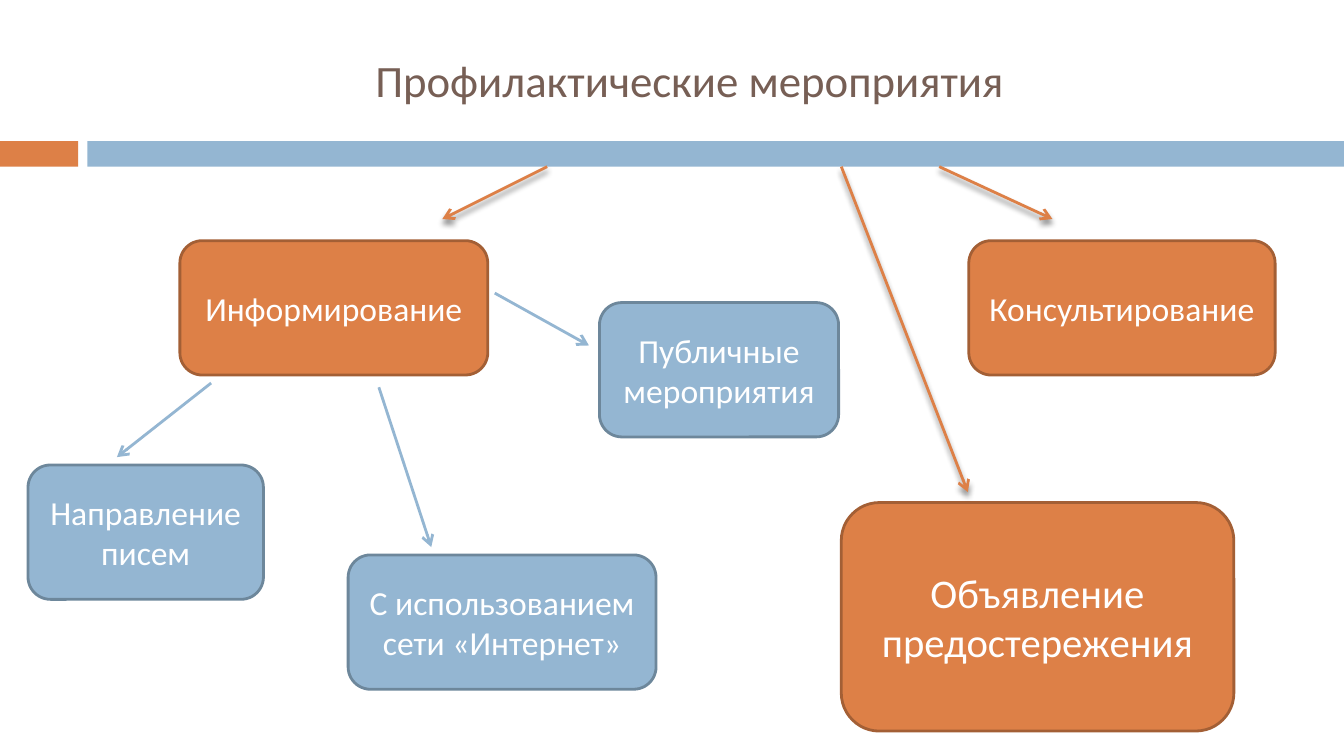
import pptx
import pptx.dml.color
import pptx.enum.shapes
import pptx.enum.text
import pptx.oxml
import pptx.oxml.ns
import pptx.util
from pptx.util import Cm

ORANGE, ORANGE_EDGE = "DD8047", "A35F35"
BLUE, BLUE_EDGE = "94B6D2", "6D879B"
WHITE, BROWN = "FFFFFF", "775F55"
BAR_TOP, BAR_HEIGHT = 2.67, 0.48
BAR_BOTTOM = BAR_TOP + BAR_HEIGHT
BOX_HEIGHT = 2.54

NAMESPACE = pptx.oxml.ns.nsdecls("a")
ARROWHEAD = f'<a:tailEnd {NAMESPACE} type="arrow"/>'
NO_EFFECT = f"<a:effectLst {NAMESPACE}/>"
SOFT_SHADOW = (
    f'<a:effectLst {NAMESPACE}>'
    '<a:outerShdw blurRad="38100" dist="30480" dir="5400000" rotWithShape="0">'
    '<a:srgbClr val="000000"><a:alpha val="45000"/></a:srgbClr>'
    "</a:outerShdw></a:effectLst>"
)


def color(hex_string):
    return pptx.dml.color.RGBColor.from_string(hex_string)


class SlideBuilder:
    font = "Calibri"
    line_width = pptx.util.Pt(1.5)

    def __init__(self, slide):
        self.slide = slide

    def add_text(self, shape, text, size, text_color, space_before=0):
        """Put one centred paragraph in the middle of the shape."""
        frame = shape.text_frame
        frame.word_wrap = True
        frame.vertical_anchor = pptx.enum.text.MSO_ANCHOR.MIDDLE
        paragraph = frame.paragraphs[0]
        paragraph.alignment = pptx.enum.text.PP_ALIGN.CENTER
        paragraph.space_before = pptx.util.Pt(space_before)
        run = paragraph.add_run()
        run.text = text
        run.font.name = self.font
        run.font.size = pptx.util.Pt(size)
        run.font.color.rgb = color(text_color)

    def title(self, text, left, top, width, height):
        shape = self.slide.shapes.add_textbox(Cm(left), Cm(top), Cm(width), Cm(height))
        self.add_text(shape, text, 24, BROWN)

    def filled_shape(self, kind, fill, left, top, width, height):
        shape = self.slide.shapes.add_shape(
            kind, Cm(left), Cm(top), Cm(width), Cm(height)
        )
        shape.shadow.inherit = False
        shape.fill.solid()
        shape.fill.fore_color.rgb = color(fill)
        return shape

    def bar(self, fill, left, width):
        kind = pptx.enum.shapes.MSO_SHAPE.RECTANGLE
        shape = self.filled_shape(kind, fill, left, BAR_TOP, width, BAR_HEIGHT)
        shape.line.fill.background()

    def box(self, text, fill, edge, left, top, width,
            height=BOX_HEIGHT, size=18, space_before=0):
        kind = pptx.enum.shapes.MSO_SHAPE.ROUNDED_RECTANGLE
        shape = self.filled_shape(kind, fill, left, top, width, height)
        shape.line.color.rgb = color(edge)
        shape.line.width = self.line_width
        self.add_text(shape, text, size, WHITE, space_before)

    def arrow(self, line_color, start, end, effect=NO_EFFECT):
        connector = self.slide.shapes.add_connector(
            pptx.enum.shapes.MSO_CONNECTOR.STRAIGHT,
            *(Cm(length) for length in (*start, *end)),
        )
        connector.line.color.rgb = color(line_color)
        connector.line.width = self.line_width
        properties = connector.element.spPr
        outline = properties.find(pptx.oxml.ns.qn("a:ln"))
        outline.append(pptx.oxml.parse_xml(ARROWHEAD))
        properties.append(pptx.oxml.parse_xml(effect))


def main():
    presentation = pptx.Presentation()
    presentation.slide_width = Cm(25.4)
    presentation.slide_height = Cm(14.29)
    builder = SlideBuilder(presentation.slides.add_slide(presentation.slide_layouts[6]))

    builder.bar(ORANGE, 0, 1.48)
    builder.bar(BLUE, 1.65, 23.75)
    builder.title("Профилактические мероприятия", 1.7, 0.48, 22.66, 2.06)

    for text, left, top, width in (
        ("Информирование", 3.4, 4.55, 5.82),
        ("Консультирование", 18.31, 4.55, 5.79),
    ):
        builder.box(text, ORANGE, ORANGE_EDGE, left, top, width)
    builder.box("Объявление предостережения", ORANGE, ORANGE_EDGE,
                15.9, 9.5, 7.42, height=4.32, size=21.8, space_before=5.2)

    for text, left, top, width in (
        ("Публичные мероприятия", 11.33, 5.72, 4.52),
        ("С использованием сети «Интернет»", 6.58, 10.49, 5.82),
        ("Направление писем", 0.53, 8.79, 4.45),
    ):
        builder.box(text, BLUE, BLUE_EDGE, left, top, width)

    for start, end in (
        ((3.99, 7.24), (2.21, 8.64)),
        ((7.16, 7.32), (8.15, 10.34)),
        ((9.35, 5.54), (11.13, 6.53)),
    ):
        builder.arrow(BLUE, start, end)

    for start_x, end in (
        (10.34, (8.36, 4.14)),
        (15.9, (18.29, 9.3)),
        (17.75, (19.89, 4.14)),
    ):
        builder.arrow(ORANGE, (start_x, BAR_BOTTOM), end, SOFT_SHADOW)

    presentation.save("out.pptx")


if __name__ == "__main__":
    main()
